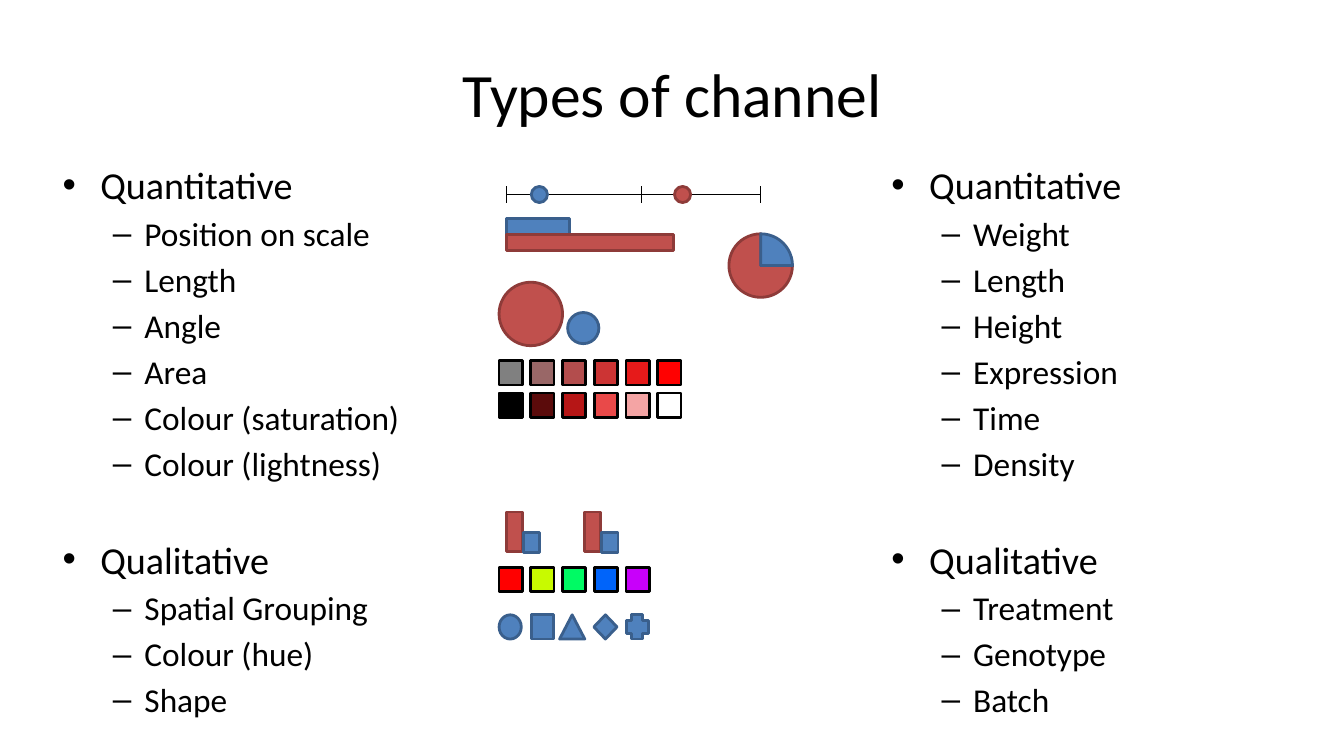
from pptx import Presentation
from pptx.dml.color import RGBColor
from pptx.enum.shapes import MSO_CONNECTOR, MSO_SHAPE
from pptx.enum.text import MSO_ANCHOR, MSO_AUTO_SIZE, PP_ALIGN
from pptx.oxml.ns import qn
from pptx.util import Inches, Pt
from lxml import etree

RECT, OVAL, PIE = MSO_SHAPE.RECTANGLE, MSO_SHAPE.OVAL, MSO_SHAPE.PIE
TRIANGLE, DIAMOND, CROSS = MSO_SHAPE.ISOSCELES_TRIANGLE, MSO_SHAPE.DIAMOND, MSO_SHAPE.CROSS

FONT = "Calibri"
BLACK = "000000"
BLUE = ("4F81BD", "3A5F8C")  # fill, outline
RED = ("C0504D", "8E3B39")

TITLE = "Types of channel"
CHANNELS = [
    ("Quantitative", ["Position on scale", "Length", "Angle", "Area",
                      "Colour (saturation)", "Colour (lightness)"]),
    ("Qualitative", ["Spatial Grouping", "Colour (hue)", "Shape"]),
]
MEASURES = [
    ("Quantitative", ["Weight", "Length", "Height", "Expression", "Time", "Density"]),
    ("Qualitative", ["Treatment", "Genotype", "Batch"]),
]
LIST_LEFTS = (0.52, 8.74)

SCALE_TICKS = (5.02, 6.36, 7.54)
SCALE_DOTS = [(5.27, BLUE), (6.69, RED)]
LENGTH_BARS = [(0.63, BLUE), (1.66, RED)]
AREA_CIRCLES = [(4.95, 2.8, 0.63, RED), (5.63, 3.1, 0.31, BLUE)]
SWATCH_ROWS = [
    (3.58, ["808080", "996767", "B34D4D", "CC3434", "E61A1A", "FF0101"]),
    (3.9, [BLACK, "5B0B0B", "B61616", "E94949", "F4A4A4", "FFFFFF"]),
    (5.63, ["FF0000", "C8FA00", "00FA64", "0064FA", "C800FA"]),
]
SWATCH_LEFT, SWATCH_PITCH = 4.95, 0.32 - 0.005
BAR_PAIR_LEFTS = (5.02, 5.8)
SYMBOLS = [(OVAL, 4.95, 0.22), (RECT, 5.27, 0.22), (TRIANGLE, 5.55, 0.25),
           (DIAMOND, 5.89, 0.23), (CROSS, 6.21, 0.22)]


def rgb(value):
    return RGBColor.from_string(value)


def place(item, left, top, width, height):
    item.left, item.top = Inches(left), Inches(top)
    item.width, item.height = Inches(width), Inches(height)


def style_font(font, size):
    font.name, font.size = FONT, Pt(size)
    font.color.rgb = rgb(BLACK)


def fill_list(body, sections, left):
    place(body, left, 1.55, 4.04, 4.95)
    frame = body.text_frame
    frame.auto_size = MSO_AUTO_SIZE.NONE
    frame.vertical_anchor = MSO_ANCHOR.TOP
    entries = [(text, level) for heading, items in sections
               for text, level in [(heading, 0)] + [(item, 1) for item in items]]
    frame.text = "\n".join(text for text, _ in entries)
    for index, (paragraph, (_, level)) in enumerate(zip(frame.paragraphs, entries)):
        paragraph.level = level
        heading_gap = 38 if index else 0
        paragraph.space_before = Pt(4.25 if level else heading_gap)
        style_font(paragraph.runs[0].font, 23.8 if level else 27.2)


def add_mark(parent, kind, left, top, width, height, colours):
    mark = parent.add_shape(kind, Inches(left), Inches(top), Inches(width), Inches(height))
    fill, outline = colours
    mark.shadow.inherit = False
    mark.fill.solid()
    mark.fill.fore_color.rgb = rgb(fill)
    mark.line.color.rgb = rgb(outline)
    mark.line.width = Pt(2)
    return mark


def add_rule(parent, x1, y1, x2, y2):
    rule = parent.add_connector(MSO_CONNECTOR.STRAIGHT,
                                Inches(x1), Inches(y1), Inches(x2), Inches(y2))
    rule.line.color.rgb = rgb(BLACK)
    rule.line.width = Pt(0.75)
    etree.SubElement(rule._element.spPr, qn("a:effectLst"))


prs = Presentation()
prs.slide_width, prs.slide_height = Inches(13.33), Inches(7.5)
slide = prs.slides.add_slide(prs.slide_layouts[3])
shapes = slide.shapes
title, *lists = slide.placeholders

place(title, 0.67, 0.3, 12, 1.25)
title.text_frame.text = TITLE
title.text_frame.vertical_anchor = MSO_ANCHOR.MIDDLE
title.text_frame.paragraphs[0].alignment = PP_ALIGN.CENTER
style_font(title.text_frame.paragraphs[0].runs[0].font, 44)
for body, sections, left in zip(lists, (CHANNELS, MEASURES), LIST_LEFTS):
    fill_list(body, sections, left)

# Position on scale
scale = shapes.add_group_shape().shapes
add_rule(scale, SCALE_TICKS[0], 1.93, SCALE_TICKS[-1], 1.93)
for x in SCALE_TICKS:
    add_rule(scale, x, 1.85, x, 2.01)
for left, colours in SCALE_DOTS:
    add_mark(scale, OVAL, left, 1.85, 0.16, 0.16, colours)

# Length
bars = shapes.add_group_shape().shapes
for row, (width, colours) in enumerate(LENGTH_BARS):
    add_mark(bars, RECT, 5.02, 2.17 + 0.16 * row, width, 0.16, colours)

# Angle: the blue quarter fills the gap in the red three quarters
angle = shapes.add_group_shape().shapes
add_mark(angle, PIE, 7.23, 2.32, 0.63, 0.63, RED)
quarter = add_mark(angle, PIE, 7.23, 2.32, 0.63, 0.63, BLUE)
quarter.adjustments[0], quarter.adjustments[1] = 108, 162
quarter.rotation = 90

# Area
for left, top, size, colours in AREA_CIRCLES:
    add_mark(shapes, OVAL, left, top, size, size, colours)

# Saturation, lightness and hue
for top, fills in SWATCH_ROWS:
    swatches = shapes.add_group_shape().shapes
    for column, fill in enumerate(fills):
        add_mark(swatches, RECT, SWATCH_LEFT + SWATCH_PITCH * column, top,
                 0.23, 0.24, (fill, BLACK))

# Spatial grouping
for left in BAR_PAIR_LEFTS:
    pair = shapes.add_group_shape().shapes
    add_mark(pair, RECT, left, 5.08, 0.16, 0.39, RED)
    add_mark(pair, RECT, left + 0.17, 5.28, 0.16, 0.2, BLUE)

# Shape
for kind, left, width in SYMBOLS:
    add_mark(shapes, kind, left, 6.1, width, 0.24, BLUE)

# Date, footer and slide number are not carried over to new slides
prs.save("out.pptx")
